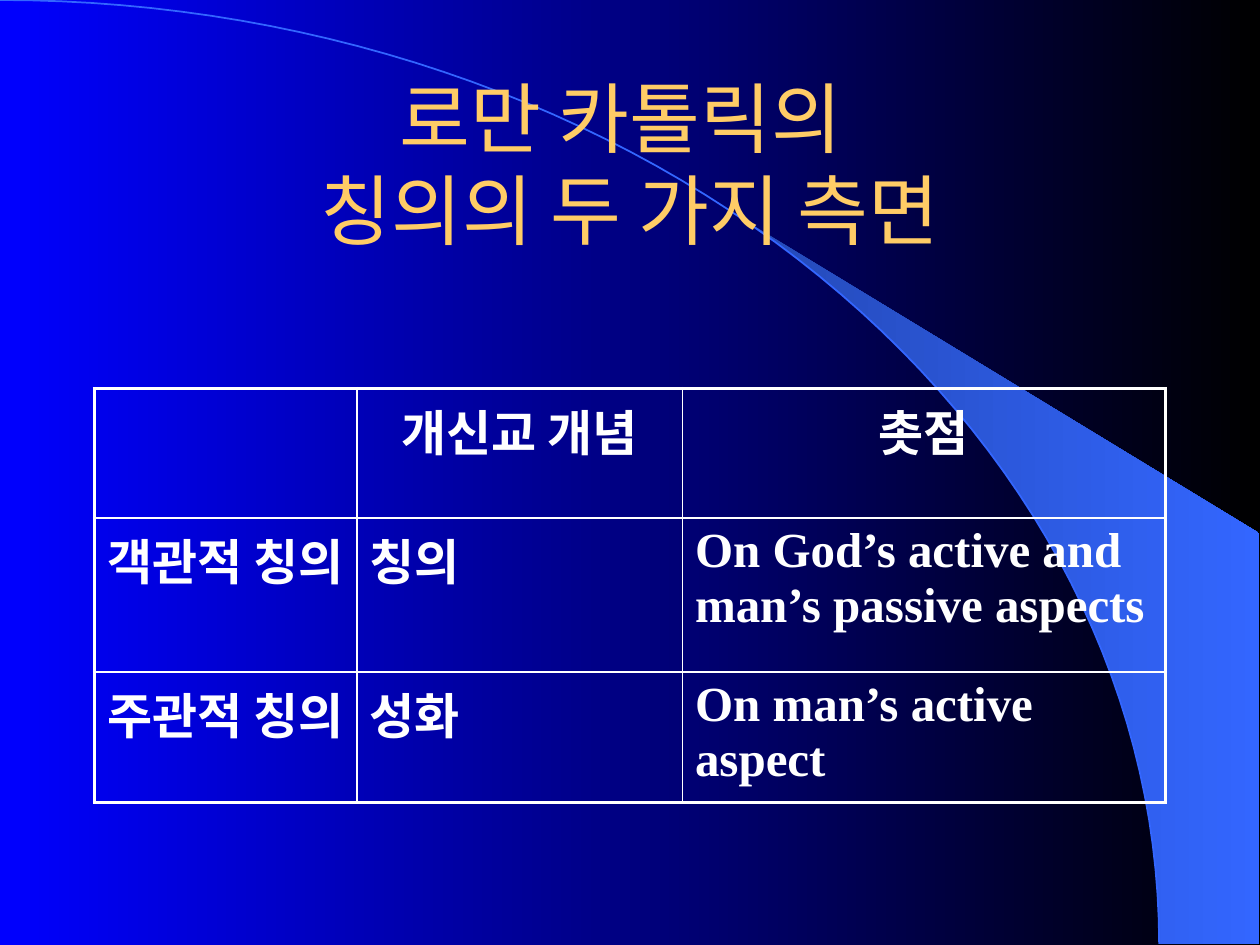
from dataclasses import dataclass
from math import asin, cos, pi, sin

from lxml.etree import SubElement
from pptx import Presentation
from pptx.dml.color import RGBColor as RGB
from pptx.enum.text import MSO_ANCHOR as ANCHOR, PP_ALIGN as ALIGN
from pptx.oxml.ns import qn
from pptx.util import Pt


@dataclass(frozen=True)
class Theme:
    back: tuple = ("0000FF", "000000")
    wedge: tuple = ("2449B6", "3366FF")
    arc: str = "3366FF"
    title: str = "FFCC66"
    body: str = "FFFFFF"
    title_font: str = "Arial"
    body_font: str = "Times New Roman"
    title_size: float = 44
    body_size: float = 28
    thick: float = 2.25
    thin: float = 1


THEME = Theme()
WIDTH, HEIGHT = 720, 540
ARC_RX, ARC_RY = 662.4, 539.3
WEDGE_LEFT, WEDGE_RIGHT, WEDGE_CORNER_Y = 424, 719.3, 304.6

COLUMNS = [150, 186, 276]
ROWS = [74, 88, 74]
CELLS = [
    ["", "개신교 개념", "촛점"],
    ["객관적 칭의", "칭의", "On God’s active and man’s passive aspects"],
    ["주관적 칭의", "성화", "On man’s active aspect"],
]


def set_gradient(fill, colors):
    fill.gradient()
    fill.gradient_angle = 0
    for stop, color in zip(fill.gradient_stops, colors):
        stop.color.rgb = RGB.from_string(color)


def style_paragraph(p, font, size, color, align, bold=False):
    p.alignment = align
    p.font.name, p.font.size, p.font.bold = font, Pt(size), bold
    p.font.color.rgb = RGB.from_string(color)


def arc_points(start, steps=60):
    """Points of the quarter ellipse from angle start down to the slide's foot."""
    angles = [start + (pi / 2 - start) * i / steps for i in range(steps + 1)]
    return [(ARC_RX * sin(a), ARC_RY * (1 - cos(a))) for a in angles]


def add_outline(s, points, close):
    first, *rest = [(Pt(x), Pt(y)) for x, y in points]
    builder = s.shapes.build_freeform(*first)
    builder.add_line_segments(rest, close=close)
    sp = builder.convert_to_shape()
    sp.shadow.inherit = False
    return sp


def add_wedge(s):
    edge = arc_points(asin(WEDGE_LEFT / ARC_RX))
    corners = [(WEDGE_RIGHT, ARC_RY), (WEDGE_RIGHT, WEDGE_CORNER_Y)]
    sp = add_outline(s, edge + corners, close=True)
    set_gradient(sp.fill, THEME.wedge)
    sp.line.fill.background()


def add_arc(s):
    sp = add_outline(s, arc_points(0), close=False)
    sp.fill.background()
    sp.line.color.rgb = RGB.from_string(THEME.arc)
    sp.line.width = Pt(1)


def add_title(s, text):
    tf = s.shapes.add_textbox(Pt(54), Pt(48), Pt(612), Pt(90)).text_frame
    tf.word_wrap = True
    tf.vertical_anchor = ANCHOR.MIDDLE
    p = tf.paragraphs[0]
    p.text = text
    style_paragraph(p, THEME.title_font, THEME.title_size, THEME.title, ALIGN.CENTER)


def set_borders(cell, outer):
    """Draw all four borders, thick on the sides flagged in outer."""
    tc_pr = cell._tc.get_or_add_tcPr()
    for side in "LRTB":
        width = THEME.thick if outer[side] else THEME.thin
        ln = SubElement(tc_pr, qn(f"a:ln{side}"), w=str(Pt(width)))
        fill = SubElement(ln, qn("a:solidFill"))
        SubElement(fill, qn("a:srgbClr"), val=THEME.body)


def add_grid(s):
    table = s.shapes.add_table(len(ROWS), len(COLUMNS), Pt(54), Pt(222),
                               Pt(sum(COLUMNS)), Pt(sum(ROWS))).table
    table.first_row = table.horz_banding = False
    for column, width in zip(table.columns, COLUMNS):
        column.width = Pt(width)
    for row, height in zip(table.rows, ROWS):
        row.height = Pt(height)
    for r, texts in enumerate(CELLS):
        for c, text in enumerate(texts):
            cell = table.cell(r, c)
            set_borders(cell, {"L": c == 0, "R": c == len(COLUMNS) - 1,
                               "T": r == 0, "B": r == len(ROWS) - 1})
            cell.fill.background()
            p = cell.text_frame.paragraphs[0]
            p.text = text
            p.space_before = Pt(0.2 * THEME.body_size)
            style_paragraph(p, THEME.body_font, THEME.body_size, THEME.body,
                            ALIGN.LEFT if r else ALIGN.CENTER, bold=True)


def main():
    prs = Presentation()
    prs.slide_width, prs.slide_height = Pt(WIDTH), Pt(HEIGHT)
    s = prs.slides.add_slide(prs.slide_layouts[6])
    set_gradient(s.background.fill, THEME.back)
    add_wedge(s)
    add_arc(s)
    add_title(s, "로만 카톨릭의 \v칭의의 두 가지 측면")
    add_grid(s)
    prs.save("out.pptx")


if __name__ == "__main__":
    main()
